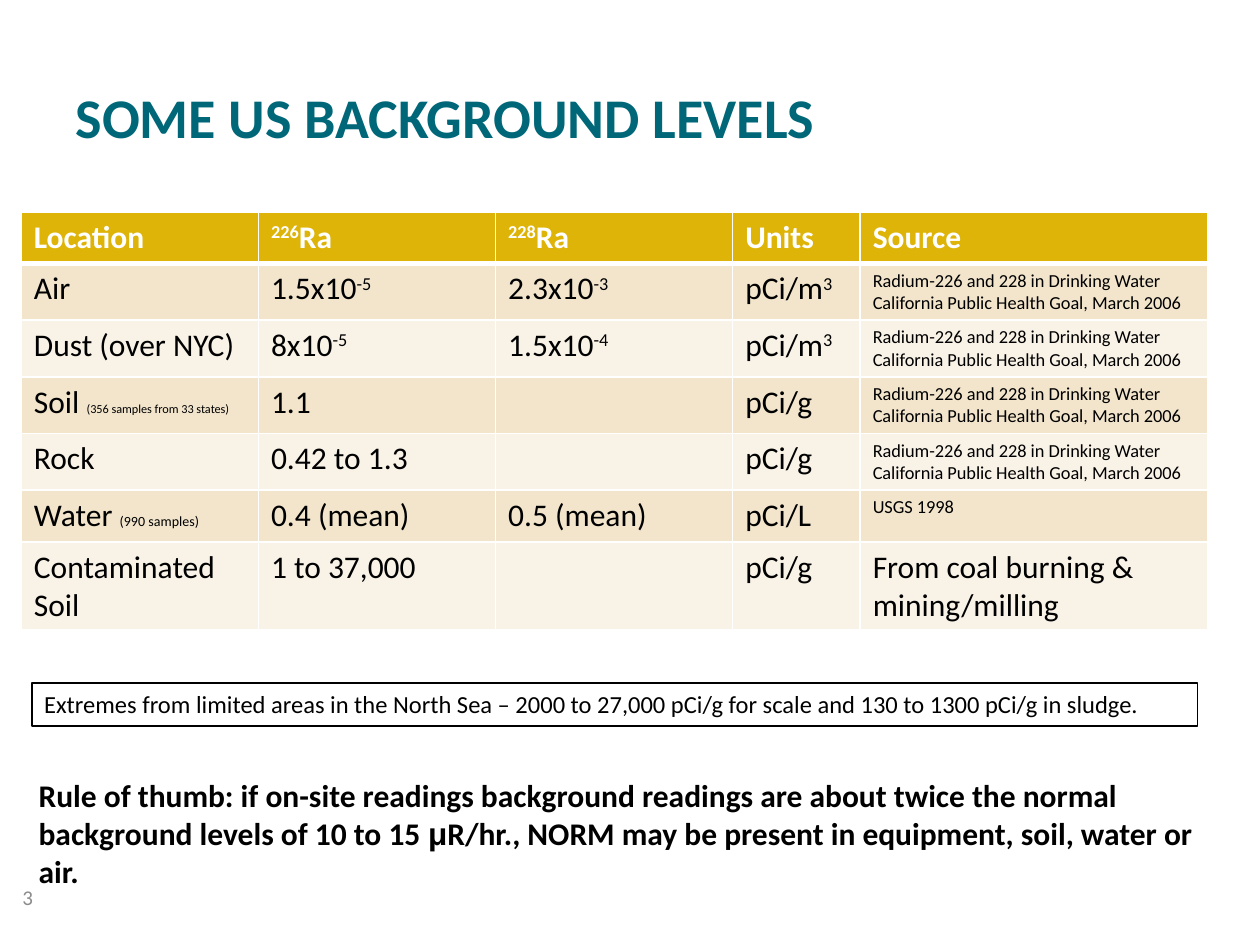
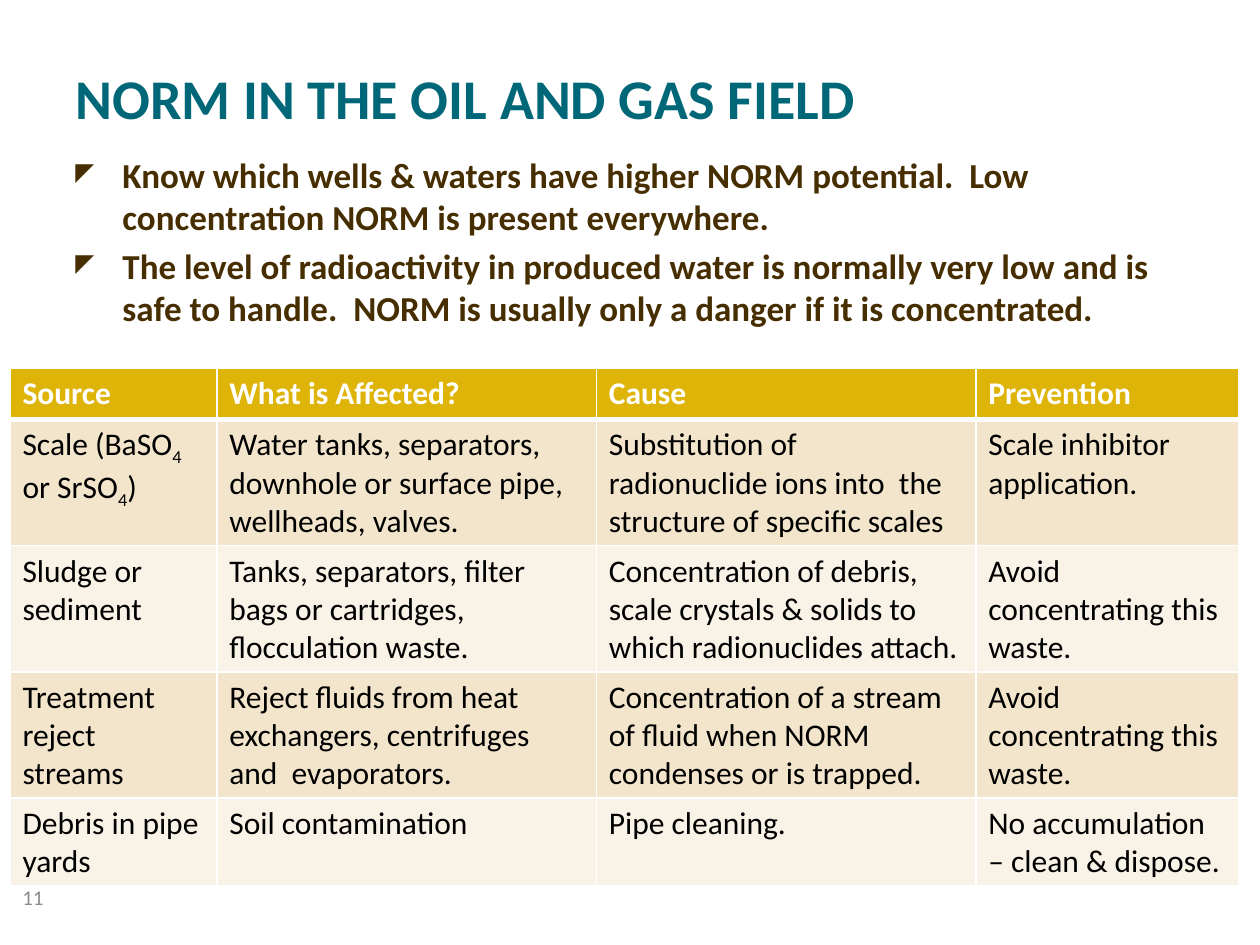
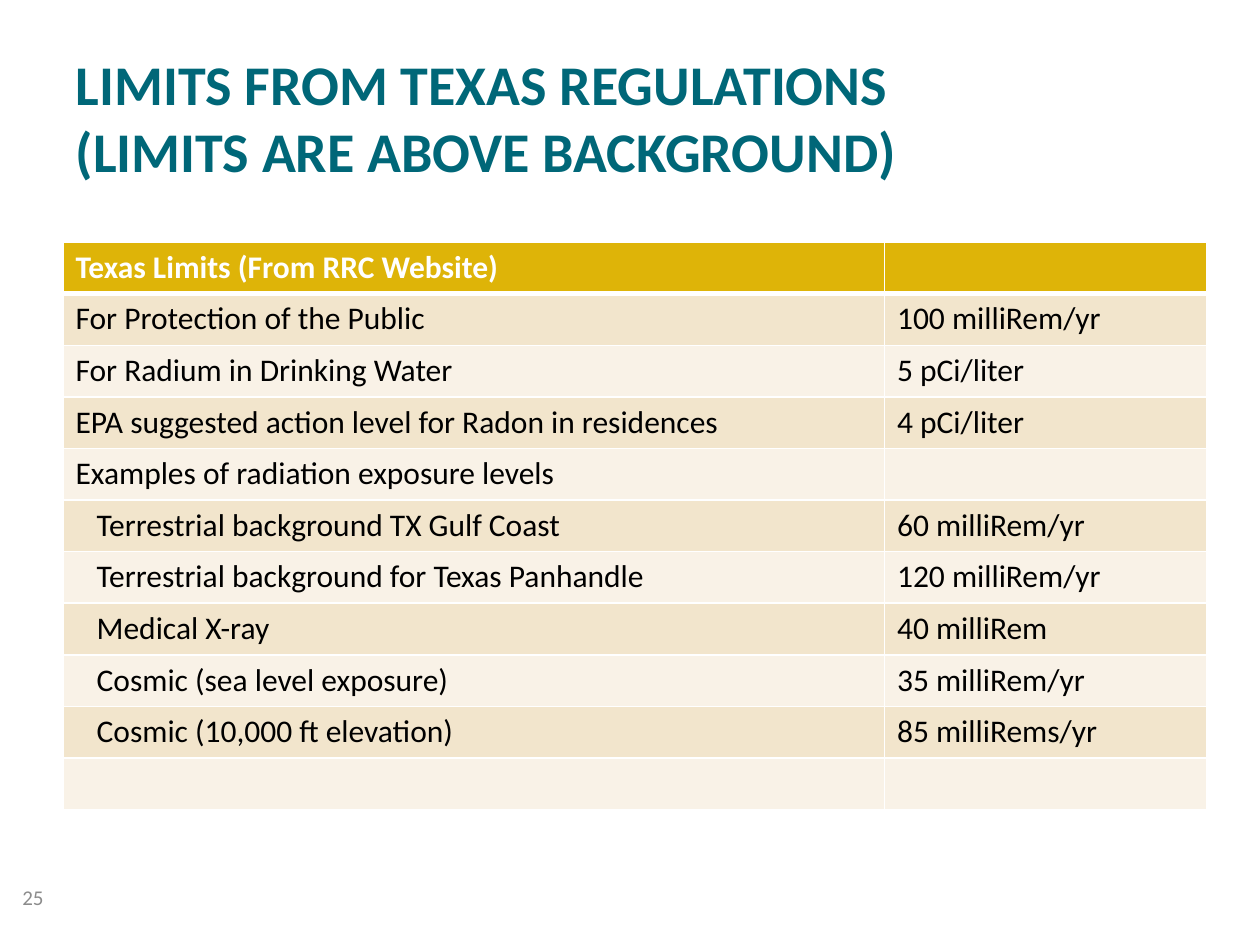
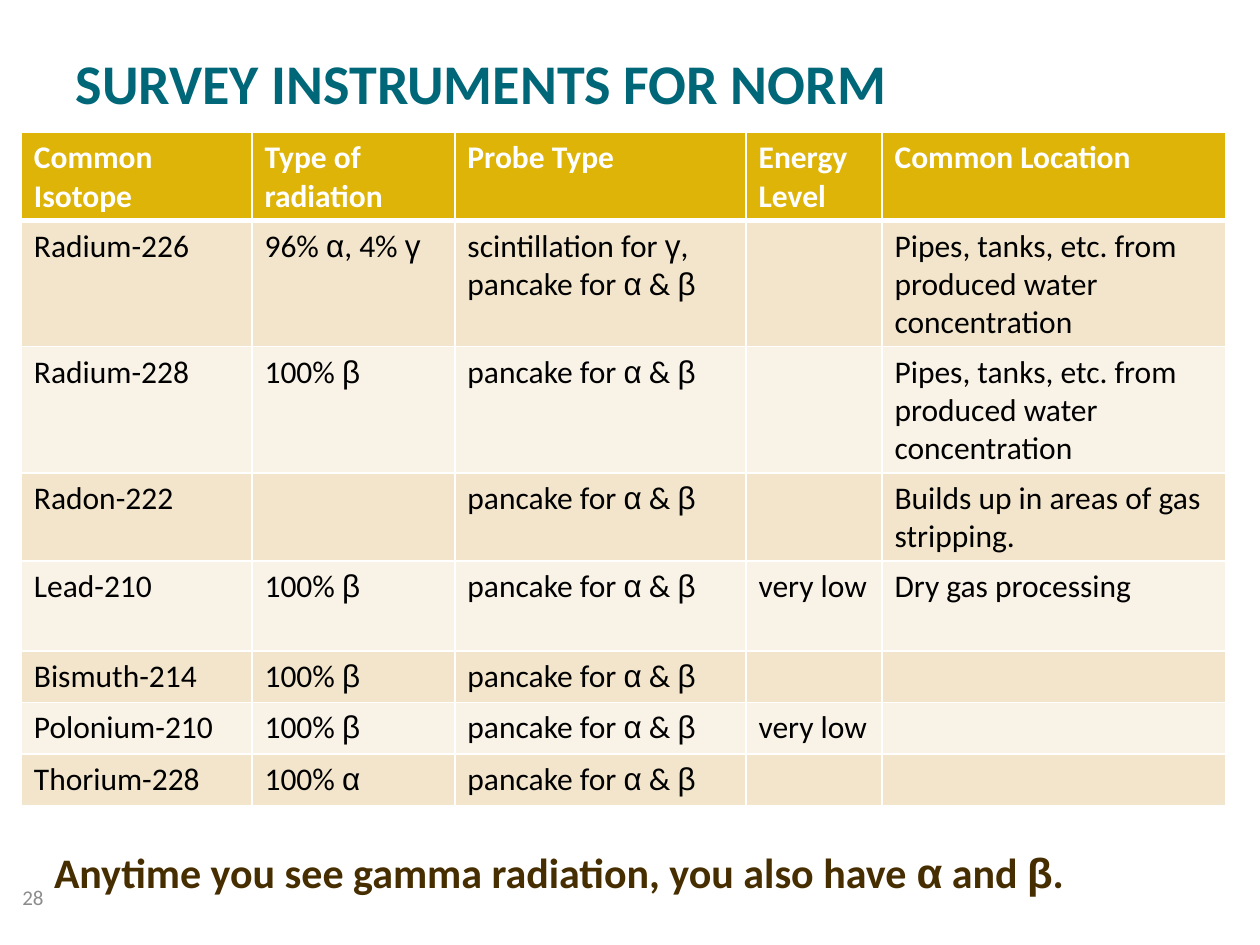
from itertools import groupby

from lxml import etree
from pptx import Presentation
from pptx import util as u
from pptx.dml.color import RGBColor
from pptx.enum import shapes, text
from pptx.oxml.ns import qn

COLORS = {"title": "006778", "brown": "462E00", "black": "000000", "white": "FFFFFF",
          "grey": "8C8C8C", "header": "DEB408", "band_dark": "F2E5CC", "band_light": "F9F2E7"}
GREEK = "αβγμ"
ROW_HEIGHT = 1.04
INSET = 0.25


def sup(words):
    return words, {"baseline": 30000}


def sub(words):
    return words, {"baseline": -25000}


def small(words, size=10.5):
    return words, {"size": size}


# Text is a string or a list of runs; a run is a string or (string, style).
GOAL = [small("Radium-226 and 228 in Drinking Water California Public Health Goal, March 2006")]
PANCAKE = "pancake for α & β"
PIPES = "Pipes, tanks, etc. from produced water concentration"

BACKGROUND_LEVELS = {
    "number": 3, "title": ["SOME US BACKGROUND LEVELS"], "title_height": 3.18,
    "table_at": (0.43, 4.27), "columns": [4.78, 4.78, 4.78, 2.57, 7.01],
    "rows": [
        ["Location", [sup("226"), "Ra"], [sup("228"), "Ra"], "Units", "Source"],
        ["Air", ["1.5x10", sup("-5")], ["2.3x10", sup("-3")], ["pCi/m", sup("3")], GOAL],
        ["Dust (over NYC)", ["8x10", sup("-5")], ["1.5x10", sup("-4")],
         ["pCi/m", sup("3")], GOAL],
        [["Soil ", small("(356 samples from 33 states)", 7)], "1.1", "", "pCi/g", GOAL],
        ["Rock", "0.42 to 1.3", "", "pCi/g", GOAL],
        [["Water ", small("(990 samples)", 8)], "0.4 (mean)", "0.5 (mean)", "pCi/L",
         [small("USGS 1998")]],
        ["Contaminated Soil", "1 to 37,000", "", "pCi/g",
         "From coal burning & mining/milling"],
    ],
}
EXTREMES = ("Extremes from limited areas in the North Sea – 2000 to 27,000 pCi/g for scale "
            "and 130 to 1300 pCi/g in sludge.")
RULE_OF_THUMB = ("Rule of thumb: if on-site readings background readings are about twice the "
                 "normal background levels of 10 to 15 μR/hr., NORM may be present in "
                 "equipment, soil, water or air.")

OIL_AND_GAS = {
    "number": 11, "title": ["NORM IN THE OIL AND GAS FIELD"], "title_height": 2.41,
    "table_at": (0.2, 7.42), "columns": [4.17, 7.65, 7.65, 5.31],
    "rows": [
        ["Source", "What is Affected?", "Cause", "Prevention"],
        [["Scale (BaSO", sub("4"), " or SrSO", sub("4"), ")"],
         "Water tanks, separators, downhole or surface pipe, wellheads, valves.",
         "Substitution of  radionuclide ions into  the structure of specific scales",
         "Scale inhibitor application."],
        ["Sludge or sediment",
         "Tanks, separators, filter bags or cartridges, flocculation waste.",
         "Concentration of debris, scale crystals & solids to which radionuclides attach.",
         "Avoid concentrating this waste."],
        ["Treatment reject streams",
         "Reject fluids from heat exchangers, centrifuges and  evaporators.",
         "Concentration of a stream of fluid when NORM condenses or is trapped.",
         "Avoid concentrating this waste."],
        ["Debris in pipe yards", "Soil contamination", "Pipe cleaning.",
         "No accumulation – clean & dispose."],
    ],
}
FIELD_POINTS = [
    "Know which wells & waters have higher NORM potential.  Low concentration NORM is "
    "present everywhere.",
    "The level of radioactivity in produced water is normally very low and is safe to "
    "handle.  NORM is usually only a danger if it is concentrated.",
]

TEXAS_LIMITS = {
    "number": 25, "title_height": 3.18,
    "title": ["LIMITS FROM TEXAS REGULATIONS", "(LIMITS ARE ABOVE BACKGROUND)"],
    "table_at": (1.27, 4.88), "columns": [16.56, 6.5], "indented_rows": range(5, 10),
    "rows": [
        ["Texas Limits (From RRC Website)", ""],
        ["For Protection of the Public", "100 milliRem/yr"],
        ["For Radium in Drinking Water", "5 pCi/liter"],
        ["EPA suggested action level for Radon in residences", "4 pCi/liter"],
        ["Examples of radiation exposure levels", ""],
        ["Terrestrial background TX Gulf Coast", "60 milliRem/yr"],
        ["Terrestrial background for Texas Panhandle", "120 milliRem/yr"],
        ["Medical X-ray", "40 milliRem"],
        ["Cosmic (sea level exposure)", "35 milliRem/yr"],
        ["Cosmic (10,000 ft elevation)", "85 milliRems/yr"],
        ["", ""],
    ],
}

INSTRUMENTS = {
    "number": 28, "title": ["SURVEY INSTRUMENTS FOR NORM"], "title_height": 1.78,
    "table_at": (0.43, 2.67), "columns": [4.65, 4.09, 5.87, 2.74, 6.93],
    "row_heights": {4: 1.81},
    "rows": [
        ["Common Isotope", "Type of radiation", "Probe Type", "Energy Level",
         "Common Location"],
        ["Radium-226", "96% α, 4% γ", "scintillation for γ, " + PANCAKE, "", PIPES],
        ["Radium-228", "100% β", PANCAKE, "", PIPES],
        ["Radon-222", "", PANCAKE, "", "Builds up in areas of gas stripping."],
        ["Lead-210", "100% β", PANCAKE, "very low", "Dry gas processing"],
        ["Bismuth-214", "100% β", PANCAKE, "", ""],
        ["Polonium-210", "100% β", PANCAKE, "very low", ""],
        ["Thorium-228", "100% α", PANCAKE, "", ""],
    ],
}
GAMMA_NOTE = "Anytime you see gamma radiation, you also have α and β."


def rgb(name):
    return RGBColor.from_string(COLORS[name])


def write(paragraph, content, size, color, bold=False):
    """Add runs to the paragraph, setting Greek letters in Arial."""
    for part in [content] if isinstance(content, str) else content:
        words, style = (part, {}) if isinstance(part, str) else part
        for greek, letters in groupby(words, lambda letter: letter in GREEK):
            run = paragraph.add_run()
            run.text = "".join(letters)
            run.font.name = "Arial" if greek else "Calibri"
            run.font.size = u.Pt(style.get("size", size))
            run.font.bold = bold
            run.font.color.rgb = rgb(color)
            if "baseline" in style:
                run._r.get_or_add_rPr().set("baseline", str(style["baseline"]))


def add_box(slide, at, content, size, color, bold=False, framed=False):
    place = [u.Cm(length) for length in at]
    if framed:
        box = slide.shapes.add_shape(shapes.MSO_SHAPE.RECTANGLE, *place)
        box.shadow.inherit = False
        box.fill.background()
        box.line.color.rgb = rgb("black")
        box.line.width = u.Pt(1)
    else:
        box = slide.shapes.add_textbox(*place)
    frame = box.text_frame
    frame.word_wrap = True
    frame.vertical_anchor = text.MSO_ANCHOR.TOP
    frame.paragraphs[0].alignment = text.PP_ALIGN.LEFT
    write(frame.paragraphs[0], content, size, color, bold)
    return frame


def add_bullets(slide, at, points):
    frame = add_box(slide, at, points[0], 20, "brown", bold=True)
    for point in points[1:]:
        paragraph = frame.add_paragraph()
        paragraph.space_before = u.Pt(4)
        write(paragraph, point, 20, "brown", bold=True)
    for paragraph in frame.paragraphs:
        properties = paragraph._p.get_or_add_pPr()
        hang = u.Cm(0.95)
        properties.set("marL", str(hang))
        properties.set("indent", str(-hang))
        etree.SubElement(properties, qn("a:buSzPct"), val="70000")
        etree.SubElement(properties, qn("a:buChar"), char="◤")


def add_borders(cell, top, bottom):
    properties = cell._tc.get_or_add_tcPr()
    for side, width in (("L", 1), ("R", 1), ("T", top), ("B", bottom)):
        line = etree.SubElement(properties, qn("a:ln" + side), w=str(u.Pt(width)))
        fill = etree.SubElement(line, qn("a:solidFill"))
        etree.SubElement(fill, qn("a:srgbClr"), val=COLORS["white"])


def add_banded_table(slide, content):
    rows, widths = content["rows"], content["columns"]
    left, top = content["table_at"]
    table = slide.shapes.add_table(
        len(rows), len(widths), u.Cm(left), u.Cm(top),
        u.Cm(sum(widths)), u.Cm(ROW_HEIGHT * len(rows))).table
    for column, width in zip(table.columns, widths):
        column.width = u.Cm(width)
    for r, row in enumerate(rows):
        table.rows[r].height = u.Cm(content.get("row_heights", {}).get(r, ROW_HEIGHT))
        band = "header" if r == 0 else "band_dark" if r % 2 else "band_light"
        for c, entry in enumerate(row):
            cell = table.cell(r, c)
            add_borders(cell, top=3 if r == 1 else 1, bottom=3 if r == 0 else 1)
            cell.fill.solid()
            cell.fill.fore_color.rgb = rgb(band)
            if c == 0 and r in content.get("indented_rows", ()):
                cell.margin_left = u.Cm(INSET + 0.43)
            if entry:
                write(cell.text_frame.paragraphs[0], entry, 18,
                      "black" if r else "white", bold=r == 0)


def add_slide(deck, content):
    slide = deck.slides.add_slide(deck.slide_layouts[5])
    title = slide.shapes.title
    title.left, title.top, title.width, title.height = (
        u.Cm(length) for length in (1.27, 0.76, 22.86, content["title_height"]))
    frame = title.text_frame
    frame.auto_size = text.MSO_AUTO_SIZE.NONE
    frame.vertical_anchor = text.MSO_ANCHOR.MIDDLE
    heading = frame.paragraphs[0]
    heading.alignment = text.PP_ALIGN.LEFT
    for i, line in enumerate(content["title"]):
        if i:
            heading.add_line_break()
        write(heading, line, 32, "title", bold=True)
    number = add_box(slide, (0.2, 17.58, 1.47, 1.02), str(content["number"]), 12, "grey")
    number.vertical_anchor = text.MSO_ANCHOR.MIDDLE
    add_banded_table(slide, content)
    return slide


def main():
    deck = Presentation()
    deck.slide_width, deck.slide_height = u.Cm(25.4), u.Cm(19.05)

    levels = add_slide(deck, BACKGROUND_LEVELS)
    add_box(levels, (0.64, 13.77, 23.5, 0.86), EXTREMES, 14, "black", framed=True)
    add_box(levels, (0.53, 15.52, 24.23, 2.57), RULE_OF_THUMB, 18, "black", bold=True)

    field = add_slide(deck, OIL_AND_GAS)
    add_bullets(field, (1.27, 2.97, 23.09, 2.54), FIELD_POINTS)

    add_slide(deck, TEXAS_LIMITS)

    instruments = add_slide(deck, INSTRUMENTS)
    add_box(instruments, (0.84, 16.94, 20.96, 1.27), GAMMA_NOTE, 24, "brown", bold=True)

    deck.save("out.pptx")


if __name__ == "__main__":
    main()
